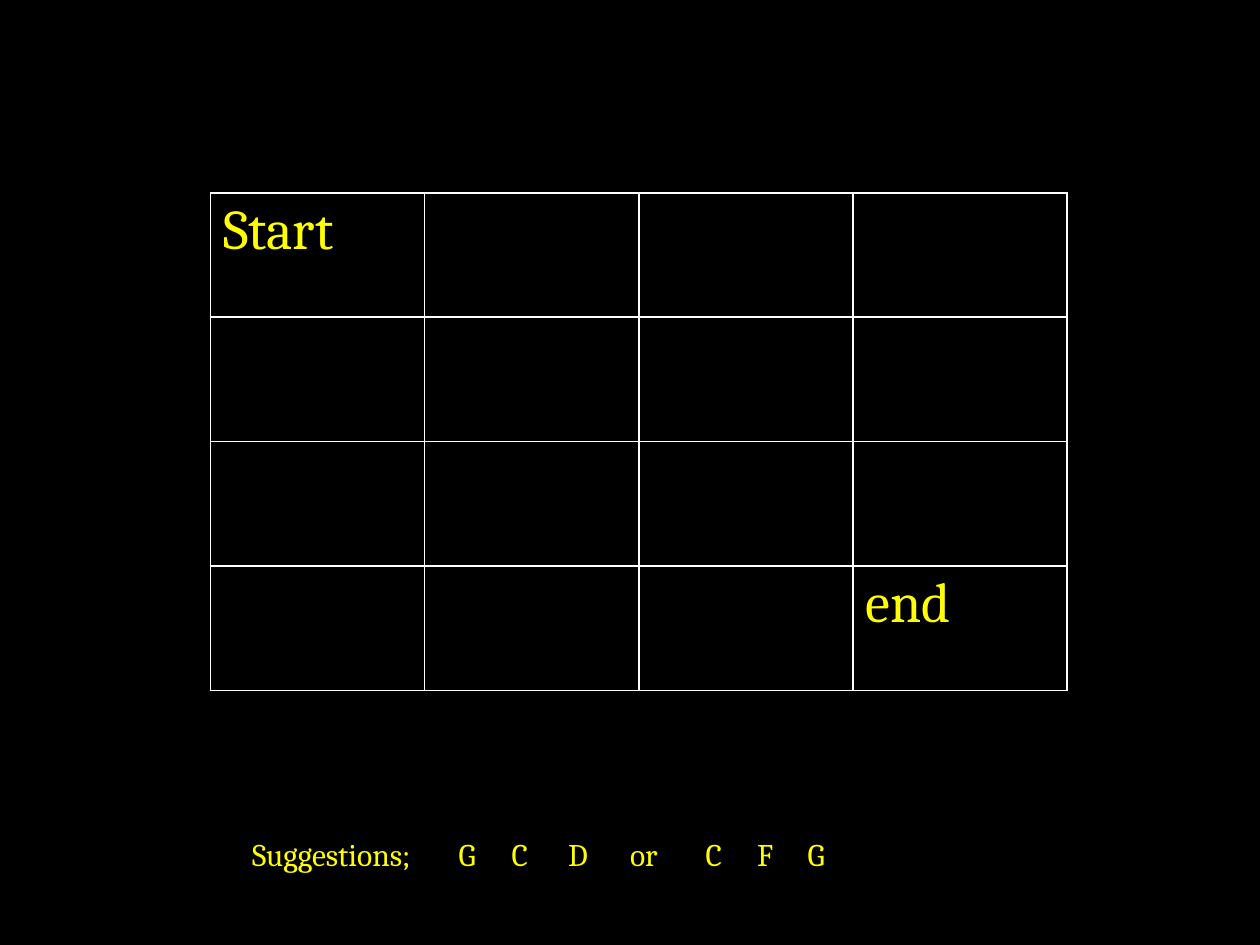
from lxml.etree import SubElement
from pptx import Presentation
from pptx.dml.color import RGBColor
from pptx.oxml.ns import qn
from pptx.util import Inches, Pt

COLORS = {"background": "000000", "text": "FFFF00", "border": "FFFFFF"}
FONT = "Cambria"
GRID_SIZE = 4
GRID_LABELS = {(0, 0): "Start", (3, 3): "end"}
SUGGESTIONS = ["Suggestions;", "G", "C", "D", "or", "C", "F", "G"]
TAB_STOPS = [1.64, 2.06, 2.51, 3.0, 3.6, 4.01, 4.41]


def style_paragraph(paragraph, size):
    font = paragraph.font
    font.name = FONT
    font.size = Pt(size)
    font.color.rgb = RGBColor.from_string(COLORS["text"])


def add_borders(cell):
    properties = cell._tc.get_or_add_tcPr()
    for side in ("a:lnL", "a:lnR", "a:lnT", "a:lnB"):
        line = SubElement(properties, qn(side), w=str(Pt(1)))
        fill = SubElement(line, qn("a:solidFill"))
        SubElement(fill, qn("a:srgbClr"), val=COLORS["border"])


def add_grid(slide, left, top, width, height):
    table = slide.shapes.add_table(
        GRID_SIZE, GRID_SIZE, left, top, width, height
    ).table
    table.first_row = False
    table.horz_banding = False
    for row in range(GRID_SIZE):
        for column in range(GRID_SIZE):
            cell = table.cell(row, column)
            add_borders(cell)
            cell.fill.background()
            cell.text = GRID_LABELS.get((row, column), "")
            style_paragraph(cell.text_frame.paragraphs[0], 32)


def add_suggestions(slide, left, top, width, height):
    text_frame = slide.shapes.add_textbox(left, top, width, height).text_frame
    text_frame.word_wrap = True
    text_frame.margin_left = Inches(0.86)
    paragraph = text_frame.paragraphs[0]
    paragraph.text = "\t".join(SUGGESTIONS)
    # Tab stops space out the chord names
    tab_list = SubElement(paragraph._p.get_or_add_pPr(), qn("a:tabLst"))
    for stop in TAB_STOPS:
        SubElement(tab_list, qn("a:tab"), pos=str(Inches(stop)), algn="l")
    style_paragraph(paragraph, 18)


def main():
    presentation = Presentation()
    presentation.slide_width = Inches(10)
    presentation.slide_height = Inches(7.5)
    slide = presentation.slides.add_slide(presentation.slide_layouts[6])
    background = slide.background.fill
    background.solid()
    background.fore_color.rgb = RGBColor.from_string(COLORS["background"])

    # Empty chord grid
    add_grid(slide, Inches(1.67), Inches(1.53), Inches(6.8), Inches(3.95))
    # Chord suggestions below the grid
    add_suggestions(slide, Inches(1.14), Inches(6.58), Inches(6.69), Inches(0.4))
    presentation.save("out.pptx")


if __name__ == "__main__":
    main()
